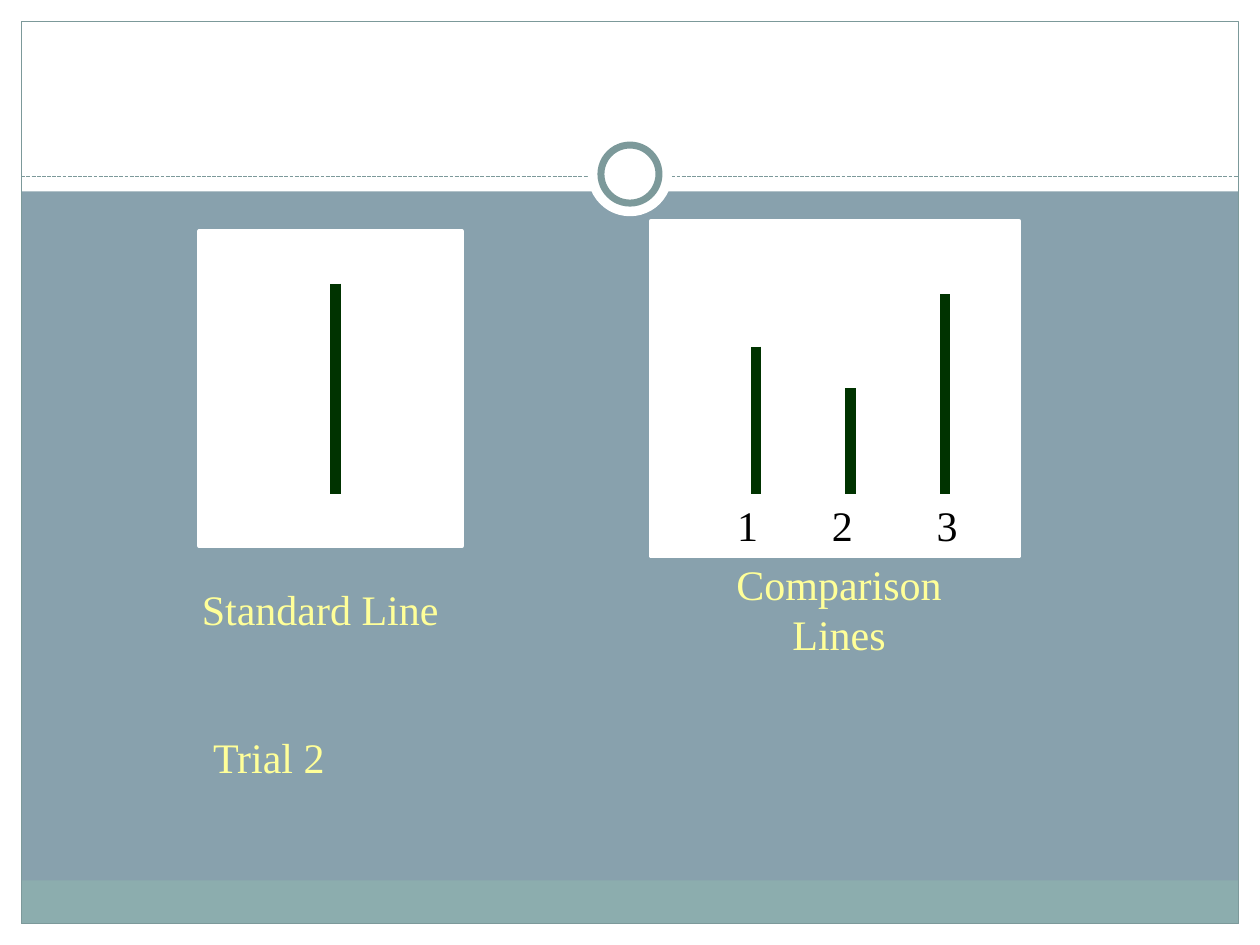
from pptx import Presentation
from pptx.dml.color import RGBColor
from pptx.enum.dml import MSO_LINE_DASH_STYLE as Dash
from pptx.enum.shapes import MSO_CONNECTOR as Connector, MSO_SHAPE as Shape
from pptx.enum.text import MSO_ANCHOR as Anchor, MSO_AUTO_SIZE as AutoSize, PP_ALIGN as Align
from pptx.oxml.ns import qn
from pptx.util import Cm, Pt
from lxml.etree import SubElement

WIDTH, HEIGHT, MARGIN = 25.4, 19.05, 0.43
WHITE, SLATE, TEAL, SAGE = "FFFFFF", "88A1AD", "7C999A", "8CADAE"
GREEN, YELLOW, BLACK = "003300", "FFFF99", "000000"
BASELINE = 9.95


def color(value):
    return RGBColor.from_string(value)


def add_block(slide, left, top, width, height, fill=None, line=None,
              weight=0.75, kind=Shape.RECTANGLE):
    shape = slide.shapes.add_shape(kind, Cm(left), Cm(top), Cm(width), Cm(height))
    shape.shadow.inherit = False
    if fill:
        shape.fill.solid()
        shape.fill.fore_color.rgb = color(fill)
    else:
        shape.fill.background()
    if line:
        shape.line.color.rgb = color(line)
        shape.line.width = Pt(weight)
    else:
        shape.line.fill.background()


def add_circle(slide, center_y, diameter, **style):
    add_block(slide, (WIDTH - diameter) / 2, center_y - diameter / 2,
              diameter, diameter, kind=Shape.OVAL, **style)


def add_line(slide, x1, y1, x2, y2, line, weight, dash=None):
    connector = slide.shapes.add_connector(
        Connector.STRAIGHT, Cm(x1), Cm(y1), Cm(x2), Cm(y2))
    connector.line.color.rgb = color(line)
    connector.line.width = Pt(weight)
    if dash:
        connector.line.dash_style = dash
    SubElement(connector._element.spPr, qn("a:effectLst"))


def add_text(slide, left, top, width, text, text_color, wrap=False,
             align=Align.CENTER, tabs=()):
    box = slide.shapes.add_textbox(Cm(left), Cm(top), Cm(width), Cm(1.27))
    frame = box.text_frame
    frame.word_wrap = wrap
    frame.auto_size = AutoSize.SHAPE_TO_FIT_TEXT
    frame.vertical_anchor = Anchor.MIDDLE
    paragraph = frame.paragraphs[0]
    paragraph.alignment = align
    if tabs:
        tab_list = SubElement(paragraph._p.get_or_add_pPr(), qn("a:tabLst"))
        for position in tabs:
            SubElement(tab_list, qn("a:tab"), pos=str(Cm(position)), algn="l")
    run = paragraph.add_run()
    run.text = text
    run.font.name = "Times New Roman"
    run.font.size = Pt(24)
    run.font.color.rgb = color(text_color)


def add_frame(slide):
    # Header band with dashed rule and ring
    add_block(slide, 0, 0, WIDTH, 3.86, WHITE)
    add_line(slide, MARGIN, 3.56, WIDTH - MARGIN, 3.56, TEAL, 0.75, Dash.SQUARE_DOT)
    add_circle(slide, 3.51, 1.7, fill=WHITE)
    add_circle(slide, 3.51, 1.17, fill=WHITE, line=TEAL, weight=4)

    # White margins, footer band and outline
    for left, top, width, height in [
        (0, HEIGHT - MARGIN, WIDTH, MARGIN),
        (0, 0, WIDTH, MARGIN),
        (WIDTH - MARGIN, 0, MARGIN, HEIGHT),
        (0, 0, MARGIN, HEIGHT),
    ]:
        add_block(slide, left, top, width, height, WHITE)
    inner_width = WIDTH - 2 * MARGIN
    add_block(slide, MARGIN, 17.75, inner_width, 0.87, SAGE)
    add_block(slide, MARGIN, MARGIN, inner_width, HEIGHT - 2 * MARGIN, line=TEAL)


def main():
    presentation = Presentation()
    presentation.slide_width, presentation.slide_height = Cm(WIDTH), Cm(HEIGHT)
    slide = presentation.slides.add_slide(presentation.slide_layouts[6])
    slide.background.fill.solid()
    slide.background.fill.fore_color.rgb = color(SLATE)
    add_frame(slide)

    # Cards for the comparison lines and the standard line
    add_block(slide, 13.13, 4.45, 7.41, 6.77, WHITE, WHITE, 2.25)
    add_text(slide, 14.61, 9.95, 5.93, "1\t2\t3", BLACK, wrap=True,
             align=Align.LEFT, tabs=(1.91, 4.02))
    add_block(slide, 4.02, 4.66, 5.29, 6.35, WHITE, WHITE, 2.25)

    # Standard line, then comparison lines 3, 2 and 1
    for x, top in [(6.77, 5.72), (19.05, 5.93), (17.15, 7.83), (15.24, 6.99)]:
        add_line(slide, x, top, x, BASELINE, GREEN, 6.25)

    # Captions
    for left, top, width, text in [
        (3.81, 11.64, 5.29, "Standard Line"),
        (13.55, 11.64, 6.73, "Comparison Lines"),
        (4.02, 14.61, 2.8, "Trial 2"),
    ]:
        add_text(slide, left, top, width, text, YELLOW)

    presentation.save("out.pptx")


if __name__ == "__main__":
    main()
